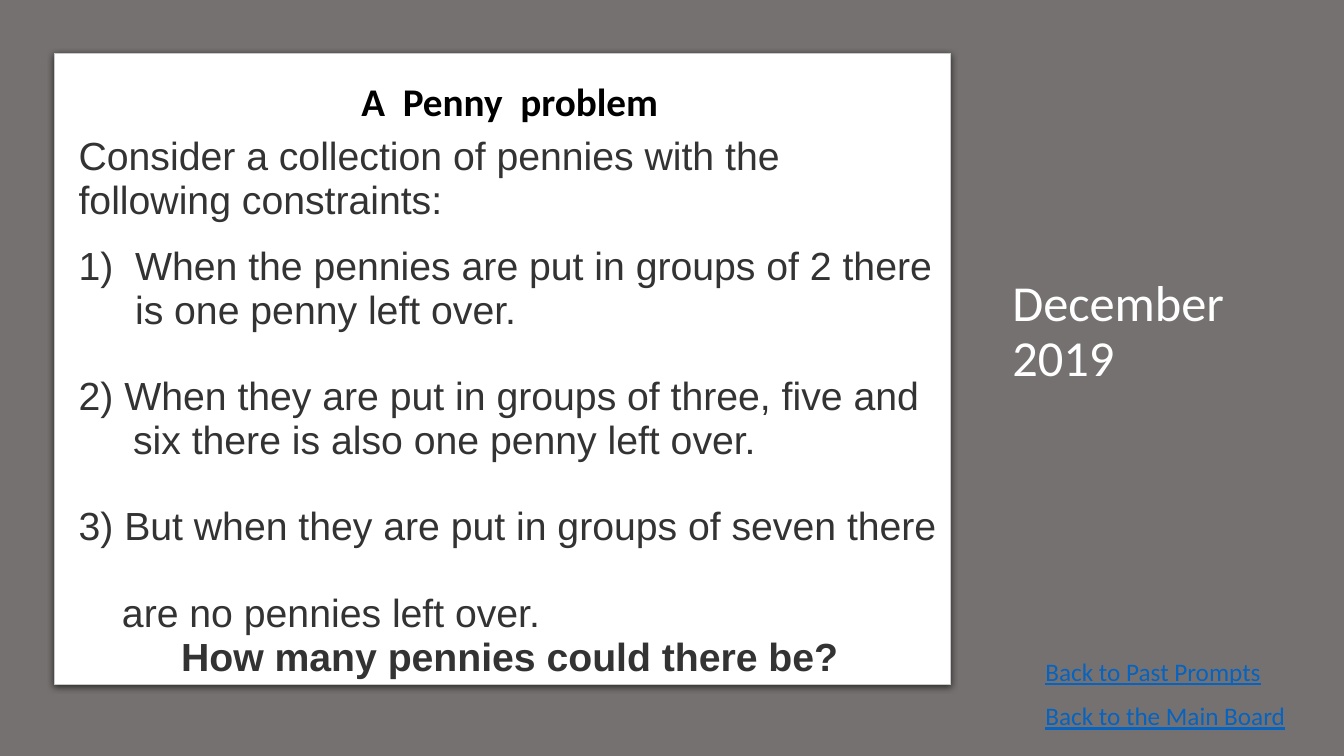
import pptx
import pptx.dml.color
import pptx.enum.shapes
import pptx.enum.text
import pptx.oxml.ns
import pptx.util
from lxml import etree

Inches = pptx.util.Inches
Pt = pptx.util.Pt
qn = pptx.oxml.ns.qn
SHAPE = pptx.enum.shapes.MSO_SHAPE
ALIGN = pptx.enum.text.PP_ALIGN
ANCHOR = pptx.enum.text.MSO_ANCHOR
AUTOSIZE = pptx.enum.text.MSO_AUTO_SIZE


def colour(value):
    return pptx.dml.color.RGBColor.from_string(value)


class PromptPage:
    """Style and current slide."""
    heading_font, body_font = "Calibri", "Arial"
    grey, white, black = "767171", "FFFFFF", "000000"
    ink, link, edge, backdrop = "333333", "0563C1", "C8CACA", "E7E6E6"

    def __init__(self, deck):
        self.page = deck.slides.add_slide(deck.slide_layouts[1])
        fill = self.page.background.fill
        fill.solid()
        fill.fore_color.rgb = colour(self.backdrop)

    def panel(self, kind, place, fill, line=None):
        shape = self.page.shapes.add_shape(kind, *map(Inches, place))
        shape.shadow.inherit = False
        shape.fill.solid()
        shape.fill.fore_color.rgb = colour(fill)
        if line:
            shape.line.color.rgb = colour(line)
            shape.line.width = Pt(0.75)
        else:
            shape.line.fill.background()
        return shape

    def drop_shadow(self, shape):
        effects = shape.element.spPr.find(qn("a:effectLst"))
        shadow = etree.SubElement(
            effects, qn("a:outerShdw"), blurRad=str(Pt(4.5)),
            dist=str(Pt(1.5)), dir="5400000", algn="ctr", rotWithShape="0")
        tint = etree.SubElement(shadow, qn("a:srgbClr"), val=self.black)
        etree.SubElement(tint, qn("a:alpha"), val="63000")

    def placeholder(self, index, place, anchor):
        """Move a template placeholder in front of the panels."""
        holder = self.page.placeholders[index]
        holder.left, holder.top, holder.width, holder.height = map(Inches, place)
        holder.element.getparent().append(holder.element)
        frame = holder.text_frame
        frame.word_wrap = True
        frame.auto_size = AUTOSIZE.NONE
        frame.vertical_anchor = anchor
        return frame

    def set_text(self, para, text, size, font, ink, bold=False,
                 align=ALIGN.LEFT, spacing=1.0, before=0, after=0):
        para.text = text
        para.font.size = Pt(size)
        para.font.name = font
        para.font.bold = bold
        para.font.color.rgb = colour(ink)
        para.alignment = align
        para.line_spacing = spacing
        para.space_before = Pt(before)
        para.space_after = Pt(after)

    def indent(self, para, margin=0, hang=0, numbered=False):
        props = para._p.get_or_add_pPr()
        props.set("marL", str(Inches(margin)))
        props.set("indent", str(-Inches(hang)))
        if numbered:
            etree.SubElement(props, qn("a:buFont"), typeface=self.body_font)
            etree.SubElement(props, qn("a:buAutoNum"), type="arabicParenR")
        else:
            etree.SubElement(props, qn("a:buNone"))
        # Bullet properties precede the default run properties
        props.append(props.find(qn("a:defRPr")))

    def title(self, text, place):
        frame = self.placeholder(0, place, ANCHOR.MIDDLE)
        self.set_text(frame.paragraphs[0], text, 36, self.heading_font,
                      self.white, spacing=0.9)

    def problem(self, heading, lines, place):
        frame = self.placeholder(1, place, ANCHOR.TOP)
        para = frame.paragraphs[0]
        self.set_text(para, heading, 28, self.heading_font, self.black,
                      bold=True, align=ALIGN.CENTER, spacing=1.07, after=8)
        self.indent(para)
        for text, layout, style in lines:
            para = frame.add_paragraph()
            self.set_text(para, text, 28, self.body_font, self.ink,
                          spacing=0.94, **style)
            self.indent(para, **layout)

    def link_label(self, text, place):
        box = self.page.shapes.add_textbox(*map(Inches, place))
        frame = box.text_frame
        frame.word_wrap = True
        frame.auto_size = AUTOSIZE.SHAPE_TO_FIT_TEXT
        para = frame.paragraphs[0]
        self.set_text(para, text, 18, self.heading_font, self.link)
        para.font.underline = True


def main():
    deck = pptx.Presentation()
    deck.slide_width, deck.slide_height = Inches(13.33), Inches(7.5)
    prompt = PromptPage(deck)

    # Backdrop and card
    prompt.panel(SHAPE.RECTANGLE, (0, 0, 13.33, 7.5), prompt.grey)
    card = prompt.panel(SHAPE.ROUNDED_RECTANGLE, (0.54, 0.53, 8.89, 6.26),
                        prompt.white, prompt.edge)
    card.adjustments[0] = 0
    prompt.drop_shadow(card)

    # Month and problem
    prompt.title("December 2019", (9.94, 0.68, 2.86, 5.24))
    gap = {"before": 30}
    prompt.problem("A  Penny  problem", [
        ("Consider a collection of pennies with the following constraints:",
         {}, {"after": 15}),
        ("When the pennies are put in groups of 2 there is one penny left over.",
         {"margin": 0.56, "hang": 0.56, "numbered": True}, {}),
        ("2) When they are put in groups of three, five and six there is also "
         "one penny left over.", {"margin": 0.54, "hang": 0.54}, gap),
        ("3) But when they are put in groups of seven there", {}, gap),
        ("are no pennies left over.", {"margin": 0.43}, gap),
        ("How many pennies could there be?", {},
         {"bold": True, "align": ALIGN.CENTER}),
    ], (0.68, 0.68, 8.75, 6.08))

    # Navigation labels
    prompt.link_label("Back to the Main Board", (10.27, 6.9, 3.06, 0.42))
    prompt.link_label("Back to Past Prompts", (10.27, 6.46, 2.52, 0.42))

    deck.save("out.pptx")


if __name__ == "__main__":
    main()
